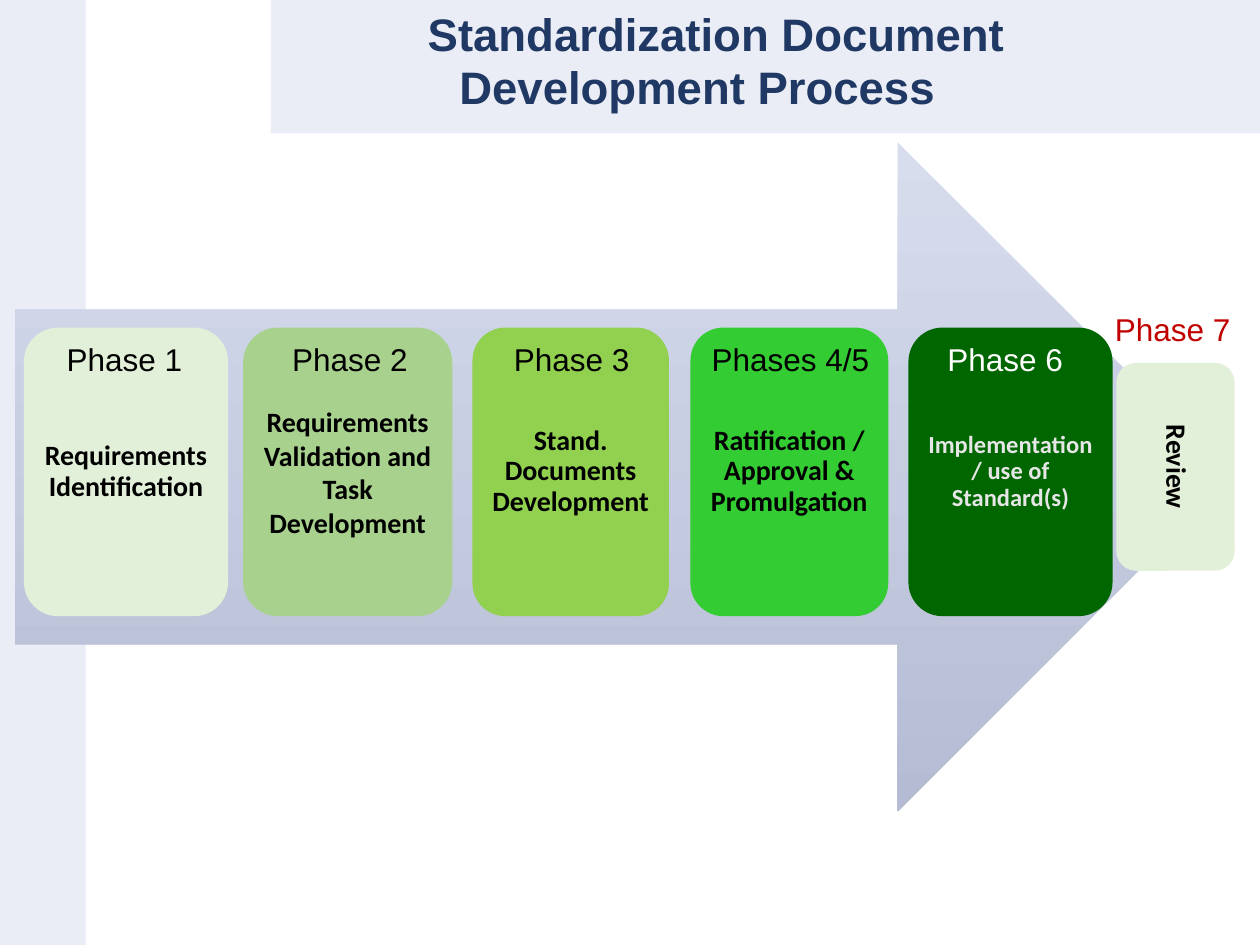
from pptx import Presentation
from pptx.dml.color import RGBColor
from pptx.enum.shapes import MSO_SHAPE
from pptx.enum.text import MSO_ANCHOR, PP_ALIGN
from pptx.util import Inches, Pt

RECTANGLE = MSO_SHAPE.RECTANGLE
ROUNDED = MSO_SHAPE.ROUNDED_RECTANGLE
ARROW = MSO_SHAPE.RIGHT_ARROW
CENTER, LEFT = PP_ALIGN.CENTER, PP_ALIGN.LEFT
TOP, MIDDLE = MSO_ANCHOR.TOP, MSO_ANCHOR.MIDDLE

BLACK = RGBColor(0x00, 0x00, 0x00)
WHITE = RGBColor(0xFF, 0xFF, 0xFF)
NAVY = RGBColor(0x20, 0x38, 0x64)
RED = RGBColor(0xC0, 0x00, 0x00)
LIGHT_GRAY = RGBColor(0xE7, 0xE6, 0xE6)
PALE_BLUE = RGBColor(0xEA, 0xED, 0xF6)
PALE_GREEN = RGBColor(0xE2, 0xF0, 0xD9)
SOFT_GREEN = RGBColor(0xA9, 0xD1, 0x8E)
LIME = RGBColor(0x92, 0xD0, 0x50)
BRIGHT_GREEN = RGBColor(0x33, 0xCC, 0x33)
DARK_GREEN = RGBColor(0x00, 0x66, 0x00)
ARROW_TOP = RGBColor(0xD8, 0xDD, 0xEE)
ARROW_BOTTOM = RGBColor(0xB4, 0xBB, 0xD3)

TITLE = ["Standardization Document", "Development Process"]

# Card left, width, fill, text, text format
CARDS = [
    (0.19, 1.62, PALE_GREEN, "Requirements Identification", {}),
    (1.93, 1.66, SOFT_GREEN, "Requirements Validation and Task Development",
     {"line_spacing": 1.0}),
    (3.75, 1.56, LIME, "Stand. Documents Development", {}),
    (5.48, 1.57, BRIGHT_GREEN, "Ratification / Approval & Promulgation", {}),
    (7.21, 1.62, DARK_GREEN, "Implementation / use of Standard(s)",
     {"size": 14, "color": LIGHT_GRAY}),
]
CARD_TOP, CARD_HEIGHT = 2.6, 2.29
CARD_FORMAT = {"font": "Calibri", "size": 16, "bold": True, "align": CENTER,
               "anchor": MIDDLE, "inset": 0.06, "line_spacing": 0.9}

# Label text, left, top, width, colour
LABELS = [
    ("Phase 1", 0.43, 2.65, 1.13, BLACK),
    ("Phase 2", 2.22, 2.65, 1.13, BLACK),
    ("Phase 3", 3.98, 2.65, 1.13, BLACK),
    ("Phases 4/5", 5.55, 2.65, 1.46, BLACK),
    ("Phase 6", 7.42, 2.65, 1.13, WHITE),
    ("Phase 7", 8.75, 2.41, 1.13, RED),
]


def write(box, lines, *, font="Arial", size=18, color=BLACK, bold=False,
          align=LEFT, anchor=TOP, inset=0.1, wrap=True, line_spacing=1.0, gap=0):
    frame = box.text_frame
    frame.word_wrap = wrap
    frame.vertical_anchor = anchor
    frame.margin_left = frame.margin_right = Inches(inset)
    frame.margin_top = frame.margin_bottom = Inches(0.05)
    for index, line in enumerate(lines):
        para = frame.add_paragraph() if index else frame.paragraphs[0]
        para.alignment = align
        para.line_spacing = line_spacing
        if index:
            para.space_before = Pt(gap)
        span = para.add_run()
        span.text = line
        span.font.name = font
        span.font.size = Pt(size)
        span.font.bold = bold
        span.font.color.rgb = color
    return frame


def add_block(page, kind, left, top, width, height, fill=None):
    block = page.shapes.add_shape(
        kind, Inches(left), Inches(top), Inches(width), Inches(height))
    block.shadow.inherit = False
    block.line.fill.background()
    if fill is not None:
        block.fill.solid()
        block.fill.fore_color.rgb = fill
    return block


def add_text_box(page, left, top, width, height):
    return page.shapes.add_textbox(
        Inches(left), Inches(top), Inches(width), Inches(height))


def main():
    deck = Presentation()
    deck.slide_width, deck.slide_height = Inches(10), Inches(7.5)
    page = deck.slides.add_slide(deck.slide_layouts[6])

    # Background bands
    add_block(page, RECTANGLE, 0, 0, 0.68, 7.5, PALE_BLUE)
    add_block(page, RECTANGLE, 2.15, 0, 7.85, 1.06, PALE_BLUE)

    # Process arrow, shaded from top to bottom
    arrow = add_block(page, ARROW, 0.12, 1.13, 9.66, 5.31)
    arrow.fill.gradient()
    arrow.fill.gradient_angle = 270
    for stop, color, position in zip(arrow.fill.gradient_stops,
                                     (ARROW_TOP, ARROW_BOTTOM), (0, 1)):
        stop.color.rgb = color
        stop.position = position

    # Phase cards
    for left, width, fill, text, changes in CARDS:
        card = add_block(page, ROUNDED, left, CARD_TOP, width, CARD_HEIGHT, fill)
        write(card, [text], **{**CARD_FORMAT, **changes})

    # Title, with each line nudged sideways by its indent
    title = add_text_box(page, 1.69, 0, 7.79, 0.98)
    frame = write(title, TITLE, size=26, color=NAVY, bold=True, align=CENTER,
                  line_spacing=0.9, gap=2)
    frame.margin_top = Inches(0.1)
    first, second = frame.paragraphs
    first._p.get_or_add_pPr().set("marL", str(Inches(0.2)))
    second._p.get_or_add_pPr().set("marR", str(Inches(0.1)))

    # Review card with vertical text
    review = add_block(page, ROUNDED, 8.86, 2.88, 0.94, 1.65, PALE_GREEN)
    frame = write(review, ["Review"], **CARD_FORMAT)
    frame._txBody.bodyPr.set("vert", "vert")

    # Phase labels
    for text, left, top, width, color in LABELS:
        label = add_text_box(page, left, top, width, 0.4)
        write(label, [text], color=color, wrap=False)

    deck.save("out.pptx")


if __name__ == "__main__":
    main()
